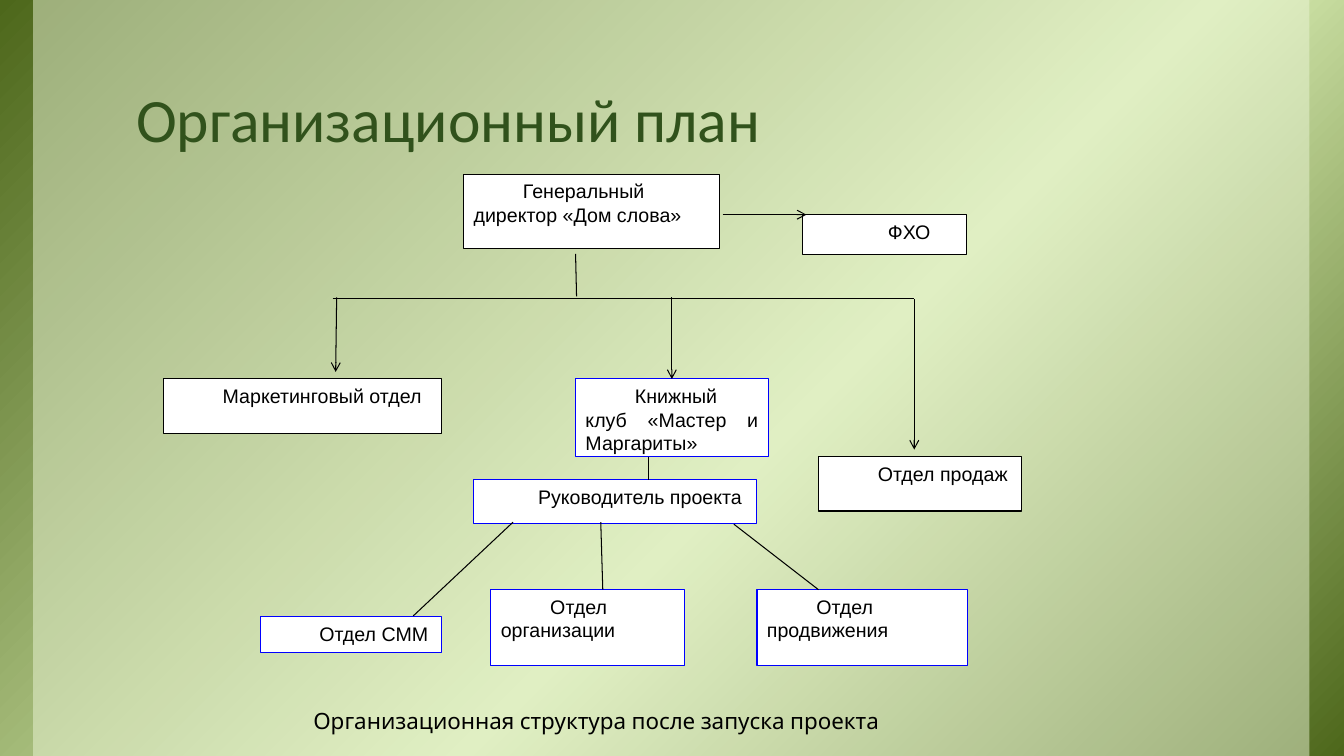
from lxml.etree import SubElement
from pptx import Presentation
from pptx.dml.color import RGBColor
from pptx.enum.shapes import MSO_CONNECTOR as Connector, MSO_SHAPE as Preset
from pptx.enum.text import MSO_ANCHOR as Anchor, MSO_AUTO_SIZE as AutoSize, PP_ALIGN as Align
from pptx.oxml.ns import qn
from pptx.util import Inches, Pt

# Grid of tenths of an inch
COLUMNS, ROWS = 133.33, 75
CELL = 0.1

BLACK = RGBColor(0x00, 0x00, 0x00)
WHITE = RGBColor(0xFF, 0xFF, 0xFF)
BLUE = RGBColor(0x00, 0x00, 0xFF)
TITLE_GREEN = RGBColor(0x31, 0x52, 0x1C)
DARK_GREEN = RGBColor(0x4D, 0x67, 0x1B)
LIGHT_GREEN = RGBColor(0xD6, 0xEA, 0xAF)
PANEL_GREEN = RGBColor(0xEB, 0xF5, 0xD7)

LINE_WIDTH = Pt(0.75)
TOP = 0

# Name: text, (column, row, columns, rows), border, alignment
UNITS = {
    "director": ("Генеральный директор «Дом слова»", (46, 17.3, 25.4, 7.4), BLACK, Align.JUSTIFY),
    "finance": ("ФХО", (79.6, 21.3, 16.3, 4), BLACK, Align.CENTER),
    "marketing": ("Маркетинговый отдел", (16.2, 37.6, 27.6, 5.4), BLACK, Align.JUSTIFY),
    "sales": ("Отдел продаж", (81.2, 45.3, 20.1, 5.4), BLACK, Align.LEFT),
    "club": ("Книжный клуб «Мастер и Маргариты»", (57.1, 37.6, 19.1, 7.7), BLUE, Align.JUSTIFY),
    "manager": ("Руководитель проекта", (47, 47.6, 28.1, 4.3), BLUE, Align.CENTER),
    "smm": ("Отдел СММ", (25.8, 61.2, 18, 3.5), BLUE, Align.JUSTIFY),
    "events": ("Отдел организации", (48.7, 58.5, 19.2, 7.5), BLUE, Align.JUSTIFY),
    "promotion": ("Отдел продвижения", (75.1, 58.5, 20.9, 7.5), BLUE, Align.JUSTIFY),
}

# Start and end of each line
PLAIN_LINES = [
    ((57.1, 25.2), (57.2, 29.4)),
    ((33, 29.6), (90.7, 29.6)),
    ((64.3, 45.3), (64.3, 47.6)),
    ((50.9, 51.8), (41, 61.1)),
    ((59.6, 51.8), (59.8, 58.5)),
    ((72.8, 52), (81.2, 58.5)),
]
ARROWS = [
    ((71.7, 21.3), (80, 21.3)),
    ((33.4, 29.5), (33.3, 36.9)),
    ((90.7, 29.7), (90.7, 44.6)),
]


def cells(*counts):
    return [Inches(count * CELL) for count in counts]


def apply(target, values):
    for name, value in values.items():
        setattr(target, name, value)


def add_rectangle(slide, place):
    shape = slide.shapes.add_shape(Preset.RECTANGLE, *cells(*place))
    shape.shadow.inherit = False
    return shape


def write(shape, text, font, paragraph_format):
    paragraph = shape.text_frame.paragraphs[0]
    apply(paragraph, paragraph_format)
    run = paragraph.add_run()
    run.text = text
    run.font.color.rgb = font["color"]
    apply(run.font, {"name": font["name"], "size": Pt(font["size"])})
    return paragraph


def add_background(slide):
    # Diagonal gradient over the whole slide
    backdrop = add_rectangle(slide, (0, 0, COLUMNS, ROWS))
    backdrop.line.fill.background()
    backdrop.fill.gradient()
    backdrop.fill.gradient_angle = 315
    stops = backdrop._element.spPr.find(qn("a:gradFill")).find(qn("a:gsLst"))
    for stop in list(stops):
        stops.remove(stop)
    for percent, color in ((0, DARK_GREEN), (58, LIGHT_GREEN), (100, DARK_GREEN)):
        stop = SubElement(stops, qn("a:gs"), pos=str(percent * 1000))
        SubElement(stop, qn("a:srgbClr"), val=str(color))

    # Half-transparent panel
    panel = add_rectangle(slide, (3.3, 0, 126.6, ROWS))
    panel.line.fill.background()
    panel.fill.solid()
    panel.fill.fore_color.rgb = PANEL_GREEN
    color = panel._element.spPr.find(qn("a:solidFill"))[0]
    SubElement(color, qn("a:alpha"), val="50000")


def add_unit(slide, text, place, border, alignment):
    unit = add_rectangle(slide, place)
    unit.fill.solid()
    unit.fill.fore_color.rgb = WHITE
    unit.line.color.rgb = border
    unit.line.width = LINE_WIDTH
    apply(unit.text_frame, {"word_wrap": True, "vertical_anchor": Anchor.TOP})
    font = {"name": "Arial", "size": 14, "color": BLACK}
    paragraph = write(unit, text, font, {"alignment": alignment})
    apply_indent = {"marL": "0", "indent": str(Inches(0.49))}
    for name, value in apply_indent.items():
        paragraph._p.get_or_add_pPr().set(name, value)
    return unit


def add_line(slide, start, end, arrow=False):
    line = slide.shapes.add_connector(Connector.STRAIGHT, *cells(*start, *end))
    line.line.color.rgb = BLACK
    line.line.width = LINE_WIDTH
    if arrow:
        SubElement(line.line._get_or_add_ln(), qn("a:tailEnd"), type="arrow")
    SubElement(line._element.spPr, qn("a:effectLst"))
    return line


def add_label(slide, text, place, font, spacing, frame_format):
    label = slide.shapes.add_textbox(*cells(*place))
    apply(label.text_frame, frame_format)
    write(label, text, font, {"line_spacing": spacing})


def main():
    presentation = Presentation()
    apply(presentation, dict(zip(("slide_width", "slide_height"), cells(COLUMNS, ROWS))))
    slide = presentation.slides.add_slide(presentation.slide_layouts[6])
    add_background(slide)

    # Title
    add_label(
        slide, "Организационный план", (12.2, 0.8, 111.1, 15.3),
        {"name": "Calibri", "size": 44, "color": TITLE_GREEN}, 0.85,
        {"word_wrap": True, "vertical_anchor": Anchor.BOTTOM,
         "margin_left": Inches(0.13), "margin_right": Inches(0.13),
         "margin_top": Inches(0.07), "margin_bottom": Inches(0.07)},
    )

    # Organisation chart
    units = {name: add_unit(slide, *unit) for name, unit in UNITS.items()}
    for start, end in PLAIN_LINES:
        add_line(slide, start, end)
    for start, end in ARROWS:
        add_line(slide, start, end, arrow=True)
    club_arrow = add_line(slide, (66.65, 29.5), (66.65, 37.6), arrow=True)
    club_arrow.end_connect(units["club"], TOP)

    # Caption
    add_label(
        slide, "Организационная структура после запуска проекта", (30.1, 69.9, 61.7, 3.6),
        {"name": "League Spartan", "size": 16, "color": BLACK}, 0.95,
        {"word_wrap": False, "auto_size": AutoSize.SHAPE_TO_FIT_TEXT},
    )
    presentation.save("out.pptx")


if __name__ == "__main__":
    main()
